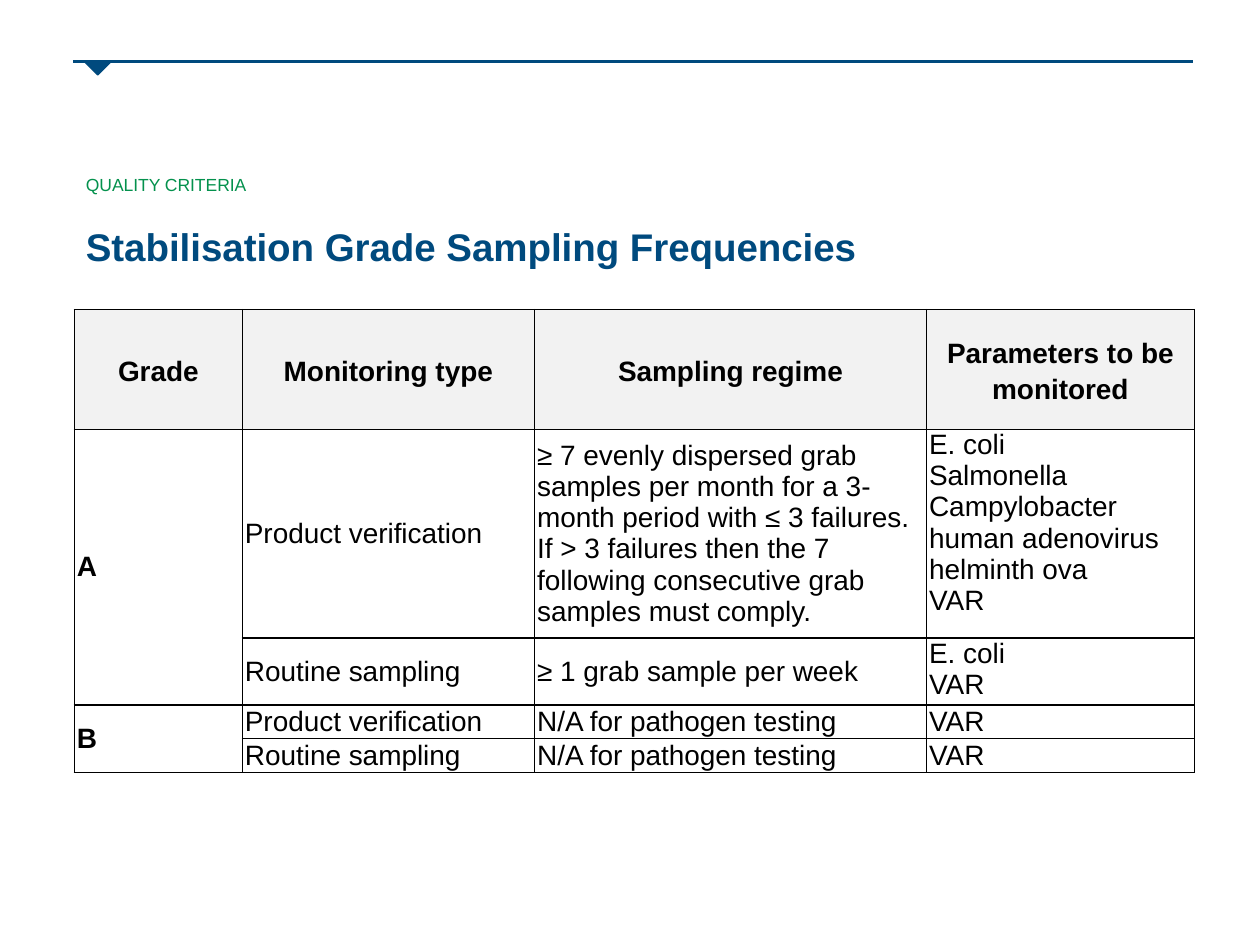
from lxml.etree import SubElement
from pptx import Presentation
from pptx.dml.color import RGBColor
from pptx.enum.shapes import MSO_CONNECTOR, MSO_SHAPE
from pptx.enum.text import MSO_ANCHOR, PP_ALIGN
from pptx.oxml.ns import qn
from pptx.util import Pt

NAVY, GREEN, BLACK, GREY = "004A7E", "04914D", "000000", "F2F2F2"
COLS = [96, 167, 224, 153]
ROWS = [68.5, 119, 35, 13, 13]
HEADS = ["Grade", "Monitoring type", "Sampling regime", "Parameters to be monitored"]
BODY = [
    ["A", "Product verification",
     "≥ 7 evenly dispersed grab samples per month for a 3-month period with "
     "≤ 3 failures. If > 3 failures then the 7 following consecutive grab "
     "samples must comply.",
     "E. coli\nSalmonella\nCampylobacter\nhuman adenovirus\nhelminth ova\nVAR"],
    ["", "Routine sampling", "≥ 1 grab sample per week", "E. coli\nVAR"],
    ["B", "Product verification", "N/A for pathogen testing", "VAR"],
    ["", "Routine sampling", "N/A for pathogen testing", "VAR"],
]
HEAD_FORM = {"alignment": PP_ALIGN.CENTER, "line_spacing": 1.15,
             "space_before": Pt(6), "space_after": Pt(6)}
BODY_FORM = {"alignment": PP_ALIGN.LEFT}
INSETS = {"margin_left": Pt(1.5), "margin_right": Pt(1.5),
          "margin_top": 0, "margin_bottom": 0}


def color(code):
    return RGBColor.from_string(code)


def apply(item, form):
    for name, value in form.items():
        setattr(item, name, value)


def style(font, size, code, bold=False):
    apply(font, {"name": "Arial", "size": Pt(size), "bold": bold})
    font.color.rgb = color(code)


def add_rule(slide, x, y, width):
    """Draw the top line with its downward pointer."""
    line = slide.shapes.add_connector(
        MSO_CONNECTOR.STRAIGHT, Pt(x), Pt(y), Pt(x + width), Pt(y))
    line.line.color.rgb = color(NAVY)
    line.line.width = Pt(2)
    SubElement(line._element.spPr, qn("a:effectLst"))
    mark = slide.shapes.add_shape(
        MSO_SHAPE.RIGHT_TRIANGLE, Pt(x + 8.4), Pt(y - 5.6), Pt(11), Pt(11))
    mark.rotation = 315
    mark.shadow.inherit = False
    mark.fill.solid()
    mark.fill.fore_color.rgb = color(NAVY)
    mark.line.color.rgb = color(NAVY)
    mark.line.width = Pt(0.75)


def add_label(slide, box, text, size, code, bold=False):
    frame = slide.shapes.add_textbox(*map(Pt, box)).text_frame
    frame.word_wrap = True
    para = frame.paragraphs[0]
    para.text = text
    style(para.font, size, code, bold)


def add_edges(cell):
    props = cell._tc.get_or_add_tcPr()
    for place, side in enumerate(("lnL", "lnR", "lnT", "lnB")):
        edge = props.makeelement(qn(f"a:{side}"), {"w": str(Pt(1))})
        fill = SubElement(edge, qn("a:solidFill"))
        SubElement(fill, qn("a:srgbClr"), val=BLACK)
        props.insert(place, edge)


def fill_cell(cell, text, head, bold, middle):
    apply(cell, INSETS)
    cell.vertical_anchor = MSO_ANCHOR.MIDDLE if middle else MSO_ANCHOR.TOP
    if head:
        cell.fill.solid()
        cell.fill.fore_color.rgb = color(GREY)
    else:
        cell.fill.background()
    cell.text = text
    for para in cell.text_frame.paragraphs:
        apply(para, HEAD_FORM if head else BODY_FORM)
        style(para.font, 16, BLACK, bold)
    add_edges(cell)


def add_grid(slide, x, y):
    table = slide.shapes.add_table(
        len(ROWS), len(COLS), Pt(x), Pt(y), Pt(sum(COLS)), Pt(sum(ROWS))).table
    table.first_row = table.horz_banding = False
    for col, width in zip(table.columns, COLS):
        col.width = Pt(width)
    for row, height in zip(table.rows, ROWS):
        row.height = Pt(height)
    for r, texts in enumerate([HEADS] + BODY):
        for c, text in enumerate(texts):
            head = r == 0
            fill_cell(table.cell(r, c), text, head,
                      bold=head or c == 0, middle="\n" not in text)
    for top in (1, 3):
        table.cell(top, 0).merge(table.cell(top + 1, 0))


def main():
    deck = Presentation()
    deck.slide_width, deck.slide_height = Pt(720), Pt(540)
    slide = deck.slides.add_slide(deck.slide_layouts[6])
    add_rule(slide, 42, 35.2, 640)
    add_label(slide, (42, 96, 473, 19), "QUALITY CRITERIA", 10, GREEN)
    add_label(slide, (42, 124, 640, 30),
              "Stabilisation Grade Sampling Frequencies", 22, NAVY, True)
    add_grid(slide, 42.5, 177)
    deck.save("out.pptx")


if __name__ == "__main__":
    main()
